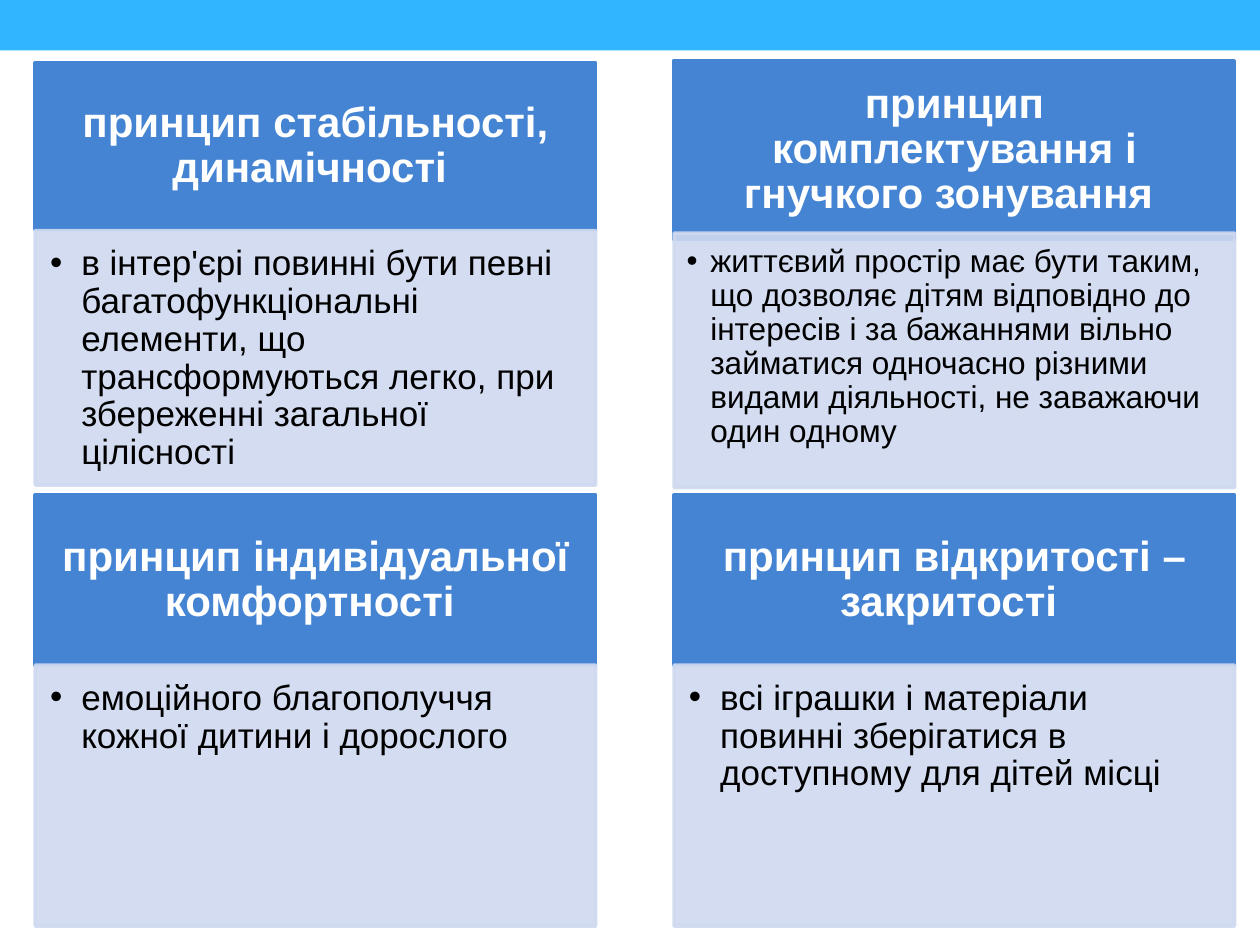
from lxml import etree
from pptx import Presentation
from pptx.dml.color import RGBColor
from pptx.enum import shapes, text
from pptx.oxml import ns
from pptx.util import Cm, Pt

SKY = RGBColor(0x31, 0xB6, 0xFD)
BLUE = RGBColor(0x45, 0x84, 0xD3)
PALE = RGBColor(0xCF, 0xD9, 0xEF)
WHITE = RGBColor(0xFF, 0xFF, 0xFF)
BLACK = RGBColor(0, 0, 0)

LEFT, RIGHT, WIDTH = 0.71, 13.59, 11.3

HEADING = {"size": Pt(24), "bold": True, "color": WHITE}
HEADING_MARGINS = (0.48, 0.28, 0.48, 0.28)

# Text size -> bullet indent and left, top, right, bottom margins in cm
DETAIL_LAYOUT = {
    20: (0.63, (0.3, 0.3, 0.41, 0.43)),
    18: (0.48, (0.25, 0.25, 0.36, 0.41)),
}

# Left, heading top and height, detail top and height, detail size, texts
PRINCIPLES = [
    (LEFT, 1.27, 3.35, 4.65, 5.13, 20, "принцип стабільності, динамічності ",
     "в інтер'єрі повинні бути певні багатофункціональні елементи, що "
     "трансформуються легко, при збереженні загальної цілісності"),
    (RIGHT, 1.22, 3.61, 4.7, 5.13, 18,
     "принцип комплектування і гнучкого зонування ",
     "життєвий простір має бути таким, що дозволяє дітям відповідно до "
     "інтересів і за бажаннями вільно займатися одночасно різними видами "
     "діяльності, не заважаючи один одному"),
    (LEFT, 9.98, 3.43, 13.41, 5.26, 20, "принцип індивідуальної комфортності ",
     "емоційного благополуччя кожної дитини і дорослого"),
    (RIGHT, 9.98, 3.43, 13.41, 5.26, 20, "принцип відкритості – закритості ",
     "всі іграшки і матеріали повинні зберігатися в доступному для дітей місці"),
]

deck = Presentation()
deck.slide_width, deck.slide_height = Cm(25.4), Cm(19.05)
slide = deck.slides.add_slide(deck.slide_layouts[6])


def add_box(left, top, width, height, color):
    box = slide.shapes.add_shape(
        shapes.MSO_SHAPE.RECTANGLE, Cm(left), Cm(top), Cm(width), Cm(height))
    box.shadow.inherit = False
    box.fill.solid()
    box.fill.fore_color.rgb = color
    box.line.color.rgb = color
    box.line.width = Pt(2.08)
    return box


def write(box, words, margins, anchor, align, font_format):
    """Fill the box with one paragraph and return it; margins are in cm."""
    frame = box.text_frame
    frame.word_wrap = True
    frame.vertical_anchor = anchor
    for side, margin in zip(("left", "top", "right", "bottom"), margins):
        setattr(frame, f"margin_{side}", Cm(margin))
    paragraph = frame.paragraphs[0]
    paragraph.alignment = align
    paragraph.line_spacing = 0.9
    run = paragraph.add_run()
    run.text = words
    run.font.name = "Arial"
    for name, value in font_format.items():
        if name == "color":
            run.font.color.rgb = value
        else:
            setattr(run.font, name, value)
    return paragraph


band = add_box(0, 0, 25.4, 1.02, SKY)
band.line.fill.background()

for (left, heading_top, heading_height, detail_top, detail_height,
     detail_size, principle, explanation) in PRINCIPLES:
    heading = add_box(left, heading_top, WIDTH, heading_height, BLUE)
    write(heading, principle, HEADING_MARGINS, text.MSO_ANCHOR.MIDDLE,
          text.PP_ALIGN.CENTER, HEADING)

    detail = add_box(left, detail_top, WIDTH, detail_height, PALE)
    for color in detail._element.spPr.iter(ns.qn("a:srgbClr")):
        etree.SubElement(color, ns.qn("a:alpha"), val="90000")
    indent, margins = DETAIL_LAYOUT[detail_size]
    paragraph = write(detail, explanation, margins, text.MSO_ANCHOR.TOP,
                      text.PP_ALIGN.LEFT,
                      {"size": Pt(detail_size), "color": BLACK})
    paragraph.level = 1
    properties = paragraph._p.get_or_add_pPr()
    properties.set("marL", str(Cm(indent)))
    properties.set("indent", str(-Cm(indent)))
    etree.SubElement(properties, ns.qn("a:buFont"), typeface="Arial")
    etree.SubElement(properties, ns.qn("a:buChar"), char="•")

deck.save("out.pptx")
